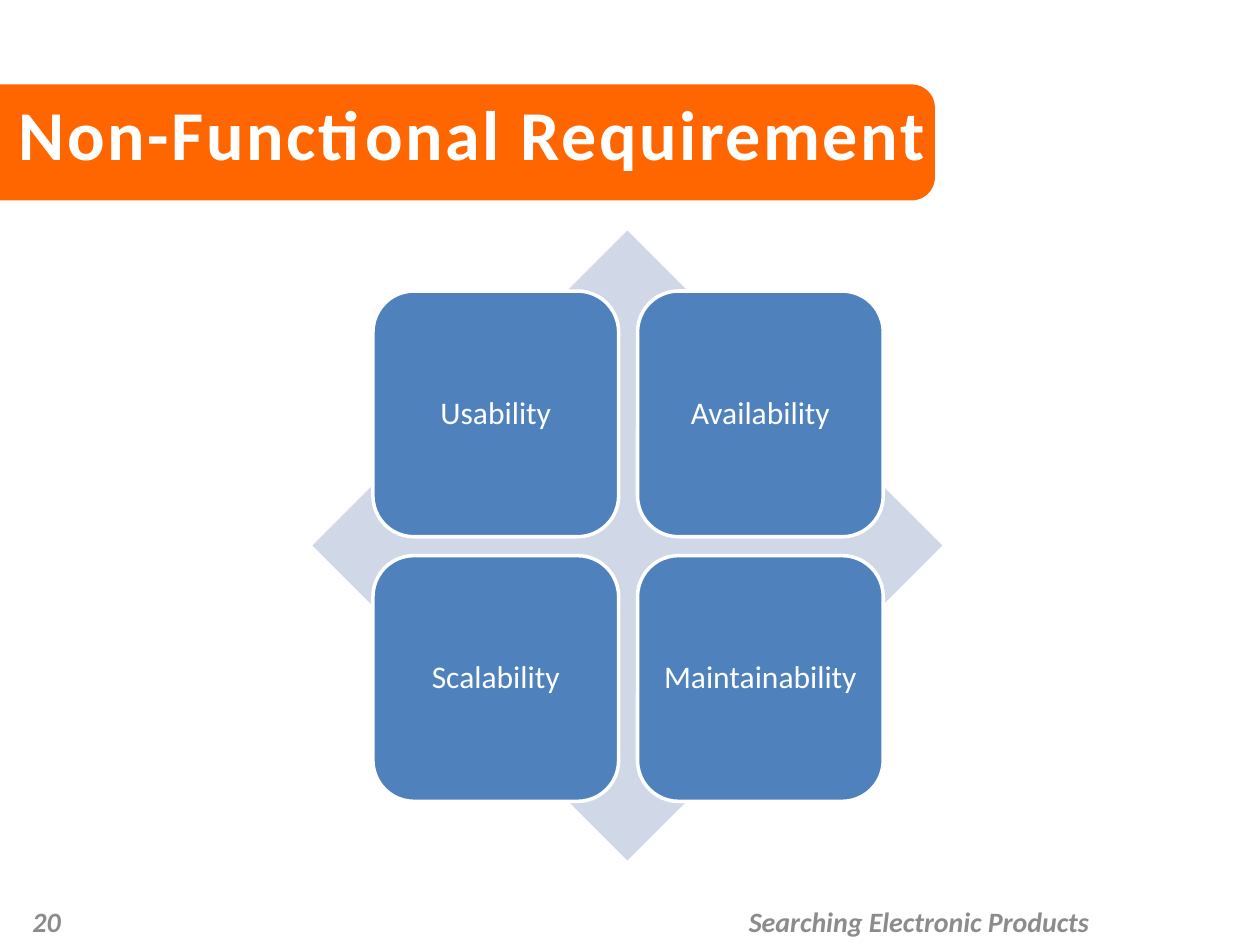
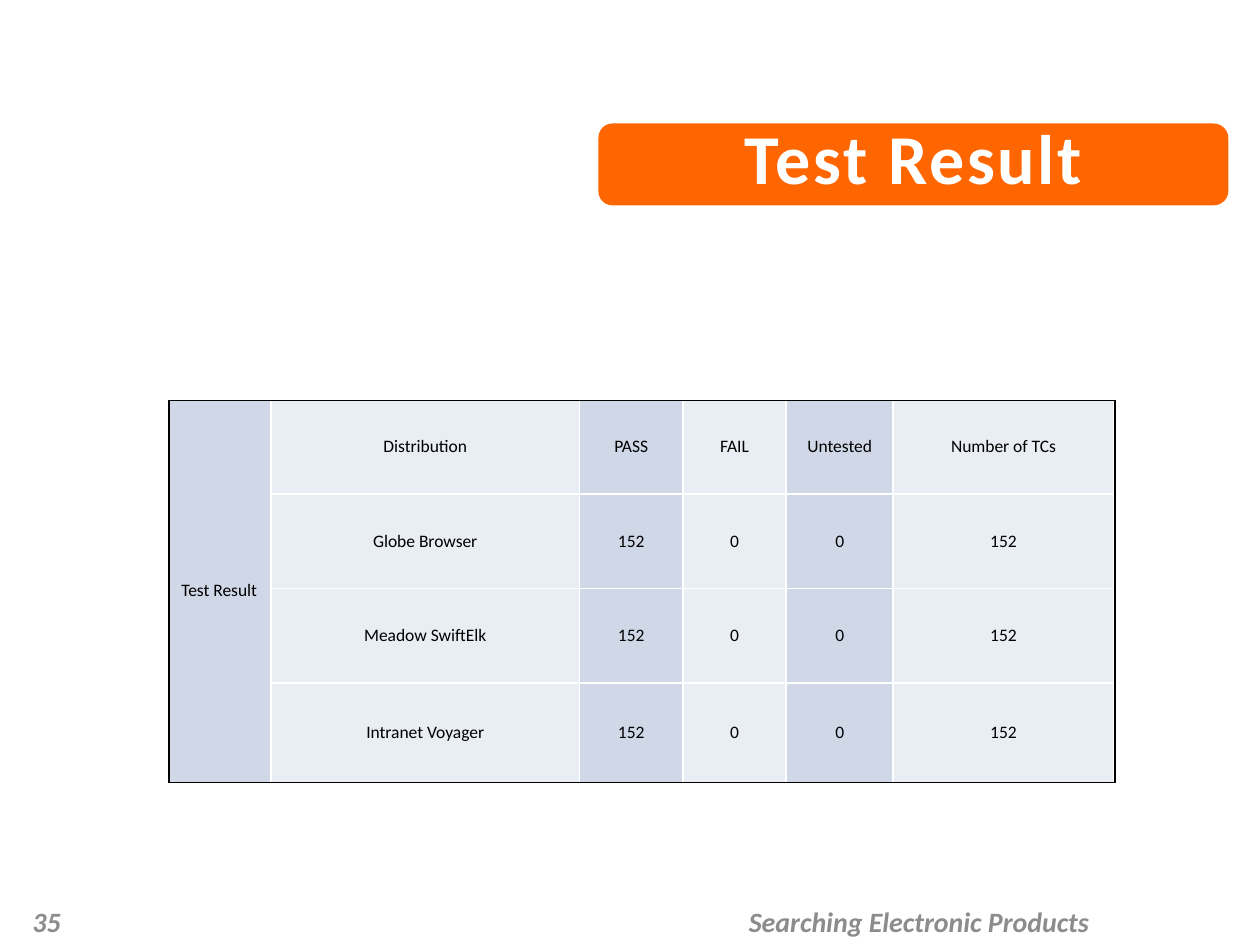
from lxml import etree
from pptx import Presentation
from pptx.dml.color import RGBColor
from pptx.enum.shapes import MSO_SHAPE
from pptx.enum.text import MSO_ANCHOR, MSO_AUTO_SIZE, PP_ALIGN
from pptx.oxml.ns import qn
from pptx.util import Inches, Pt

BAND_SHAPE = MSO_SHAPE.ROUND_2_SAME_RECTANGLE
DIAMOND = MSO_SHAPE.DIAMOND
ROUNDED = MSO_SHAPE.ROUNDED_RECTANGLE
TOP, MIDDLE = MSO_ANCHOR.TOP, MSO_ANCHOR.MIDDLE
CENTER, RIGHT = PP_ALIGN.CENTER, PP_ALIGN.RIGHT
NO_AUTOFIT = MSO_AUTO_SIZE.NONE

FONT = "Calibri"
ORANGE, BLUE = "FF6600", "4F81BD"
PALE, PALER = "D0D8E8", "E9EDF4"
WHITE, BLACK, GRAY = "FFFFFF", "000000", "8C8C8C"

FOOTER = "Searching Electronic Products"
REQUIREMENTS = {
    "number": "20",
    "title": "Non-Functional Requirement",
    "title_at": (-0.5, 0.67, 8.5, 0.89),
    "band_at": (0, 0.67, 7.42, 0.92),
    "band_corners": (0, 0.2),
}
RESULTS = {
    "number": "35",
    "title": "Test Result",
    "title_at": (3, 0.86, 8.5, 0.89),
    "band_at": (4.75, 0.98, 5, 0.65),
    "band_corners": (0.17, 0.18),
}

QUALITIES = ["Usability", "Availability", "Scalability", "Maintainability"]
DIAMOND_AT = (2.48, 1.83, 5, 5)
TILE_SIZE, TILE_STEP, TILE_INSET = 1.95, 2.1, 0.48

RESULT_LABEL = "Test Result"
RESULT_ROWS = [
    ("Distribution", "PASS", "FAIL", "Untested", "Number of TCs"),
    ("Globe Browser", "152", "0", "0", "152"),
    ("Meadow SwiftElk", "152", "0", "0", "152"),
    ("Intranet Voyager", "152", "0", "0", "152"),
]
COLUMN_WIDTHS = [0.82, 2.45, 0.82, 0.82, 0.85, 1.75]
ROW_HEIGHTS = [0.75, 0.75, 0.75, 0.79]
TABLE_LEFT, TABLE_TOP = 1.33, 3.17
FRAME_LEFT, FRAME_TOP, FRAME_WIDTH, FRAME_HEIGHT = 1.34, 3.18, 7.51, 3.03


def color(value):
    return RGBColor.from_string(value)


def inches(values):
    return [Inches(value) for value in values]


def write(frame, text, size=18, ink=WHITE, bold=False, italic=False,
          align=CENTER, anchor=MIDDLE, spacing=None, line_spacing=None):
    frame.word_wrap = True
    frame.vertical_anchor = anchor
    para = frame.paragraphs[0]
    para.alignment = align
    if line_spacing:
        para.line_spacing = line_spacing
    span = para.add_run()
    span.text = text
    font = span.font
    font.name, font.size, font.bold, font.italic = FONT, Pt(size), bold, italic
    font.color.rgb = color(ink)
    if spacing:
        span._r.get_or_add_rPr().set("spc", str(int(spacing * 100)))


def add_filled(shapes, kind, position, fill, outline=None):
    shape = shapes.add_shape(kind, *inches(position))
    shape.shadow.inherit = False
    shape.fill.solid()
    shape.fill.fore_color.rgb = color(fill)
    if outline:
        shape.line.color.rgb = color(outline)
        shape.line.width = Pt(2)
    else:
        shape.line.fill.background()
    return shape


def add_band(slide, position, corners):
    left, top, width, height = position
    upright = (left + (width - height) / 2, top - (width - height) / 2, height, width)
    band = add_filled(slide.shapes, BAND_SHAPE, upright, ORANGE)
    band.rotation = 270
    for index, corner in enumerate(corners):
        band.adjustments[index] = corner
    return band


def add_page(deck, content):
    slide = deck.slides.add_slide(deck.slide_layouts[5])
    band = add_band(slide, content["band_at"], content["band_corners"])
    title = slide.shapes.title
    title._element.addprevious(band._element)
    title.left, title.top, title.width, title.height = inches(content["title_at"])
    title.text_frame.auto_size = NO_AUTOFIT
    write(title.text_frame, content["title"], size=40, bold=True, anchor=TOP, spacing=1.5)
    footers = [
        (FOOTER, (5.71, 7.11, 3.17, 0.4), CENTER),
        (content["number"], (-1.75, 7.11, 2.33, 0.4), RIGHT),
    ]
    for text, position, align in footers:
        box = slide.shapes.add_textbox(*inches(position))
        write(box.text_frame, text, size=16, ink=GRAY, bold=True, italic=True, align=align)
    return slide


def add_quality_matrix(slide):
    group = slide.shapes.add_group_shape()
    add_filled(group.shapes, DIAMOND, DIAMOND_AT, PALE)
    for index, quality in enumerate(QUALITIES):
        row, column = divmod(index, 2)
        left = DIAMOND_AT[0] + TILE_INSET + column * TILE_STEP
        top = DIAMOND_AT[1] + TILE_INSET + row * TILE_STEP
        tile = add_filled(group.shapes, ROUNDED, (left, top, TILE_SIZE, TILE_SIZE), BLUE, WHITE)
        frame = tile.text_frame
        frame.margin_left = frame.margin_right = Inches(0.07)
        frame.margin_top = frame.margin_bottom = Inches(0.07)
        write(frame, quality, line_spacing=0.9)


def set_borders(cell, ink):
    properties = cell._tc.get_or_add_tcPr()
    for side in ("a:lnL", "a:lnR", "a:lnT", "a:lnB"):
        line = etree.SubElement(properties, qn(side), w=str(Pt(1)))
        fill = etree.SubElement(line, qn("a:solidFill"))
        etree.SubElement(fill, qn("a:srgbClr"), val=ink)


def add_grid(slide, left, top, widths, heights, border):
    position = inches((left, top, sum(widths), sum(heights)))
    table = slide.shapes.add_table(len(heights), len(widths), *position).table
    table.first_row = table.horz_banding = False
    for column, width in zip(table.columns, widths):
        column.width = Inches(width)
    for row, height in zip(table.rows, heights):
        row.height = Inches(height)
    for cell in table.iter_cells():
        set_borders(cell, border)
        cell.fill.background()
    return table


def fill_cell(cell, text, fill):
    cell.margin_left = cell.margin_right = cell.margin_top = cell.margin_bottom = 0
    cell.vertical_anchor = MIDDLE
    cell.fill.solid()
    cell.fill.fore_color.rgb = color(fill)
    para = cell.text_frame.paragraphs[0]
    para.alignment = CENTER
    span = para.add_run()
    span.text = text
    span.font.name, span.font.size = FONT, Pt(10)
    span.font.color.rgb = color(BLACK)


def add_result_table(slide):
    table = add_grid(slide, TABLE_LEFT, TABLE_TOP, COLUMN_WIDTHS, ROW_HEIGHTS, WHITE)
    table.cell(0, 0).merge(table.cell(len(RESULT_ROWS) - 1, 0))
    fill_cell(table.cell(0, 0), RESULT_LABEL, PALE)
    for row, values in enumerate(RESULT_ROWS):
        for column, value in enumerate(values, start=1):
            fill_cell(table.cell(row, column), value, PALER if column % 2 else PALE)
    add_grid(slide, FRAME_LEFT, FRAME_TOP, [FRAME_WIDTH], [FRAME_HEIGHT], BLACK)


def main():
    deck = Presentation()
    deck.slide_width, deck.slide_height = Inches(10), Inches(7.5)
    add_quality_matrix(add_page(deck, REQUIREMENTS))
    add_result_table(add_page(deck, RESULTS))
    deck.save("out.pptx")


if __name__ == "__main__":
    main()
